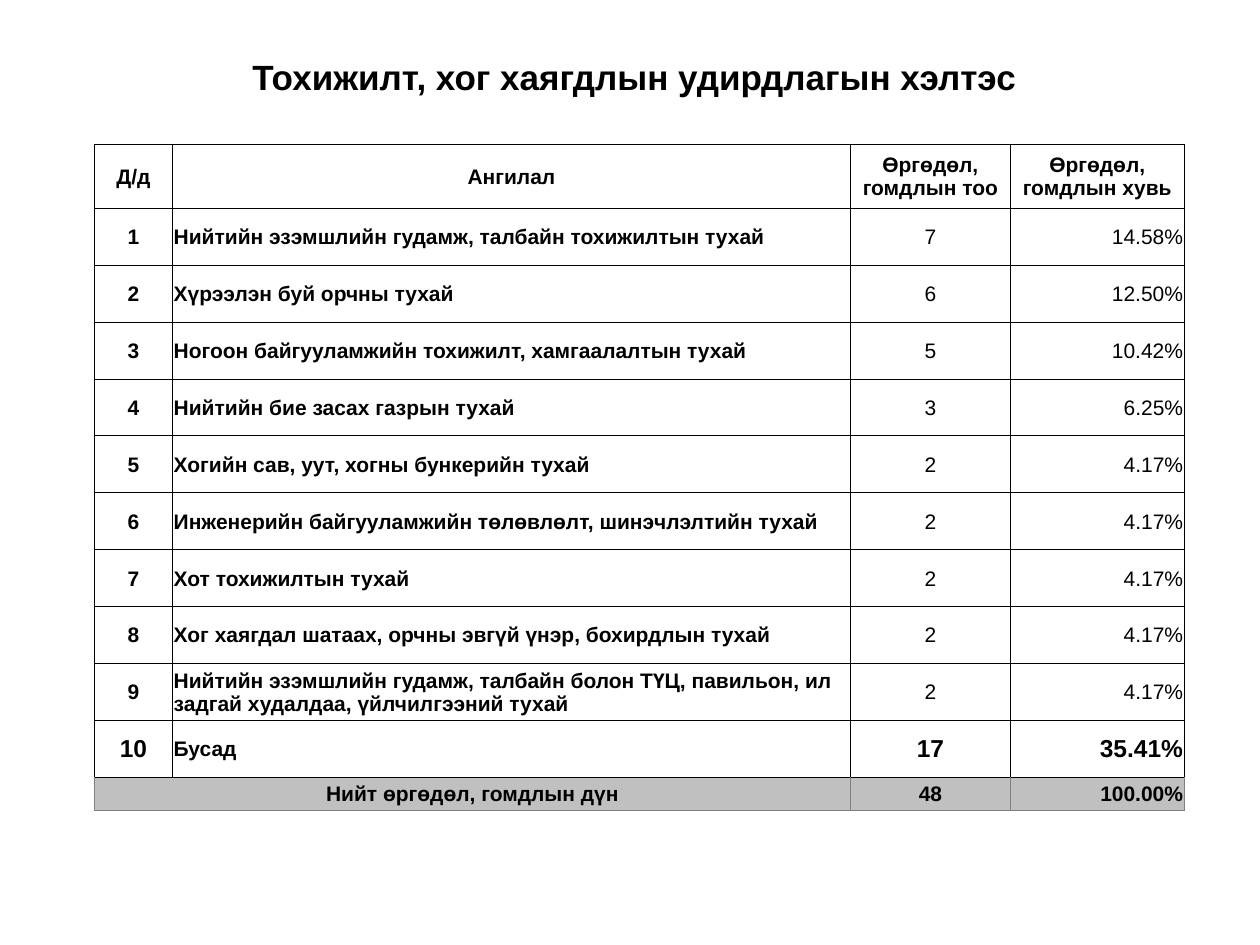
import pptx
import pptx.util
import pptx.dml.color
import pptx.enum.text
import pptx.oxml
import pptx.oxml.ns

Pt = pptx.util.Pt
RGB = pptx.dml.color.RGBColor
ALIGN = pptx.enum.text.PP_ALIGN
ANCHOR = pptx.enum.text.MSO_ANCHOR

BLACK = RGB(0x00, 0x00, 0x00)
WHITE = RGB(0xFF, 0xFF, 0xFF)
SILVER = RGB(0xC0, 0xC0, 0xC0)
GRAY = RGB(0x80, 0x80, 0x80)
FONT = "Arial"

TITLE = "Тохижилт, хог хаягдлын удирдлагын хэлтэс"
HEAD = ("Д/д", "Ангилал", "Өргөдөл, гомдлын тоо", "Өргөдөл, гомдлын хувь")
TOPICS = (
    ("Нийтийн эзэмшлийн гудамж, талбайн тохижилтын тухай", "7", "14.58%"),
    ("Хүрээлэн буй орчны тухай", "6", "12.50%"),
    ("Ногоон байгууламжийн тохижилт, хамгаалалтын тухай", "5", "10.42%"),
    ("Нийтийн бие засах газрын тухай", "3", "6.25%"),
    ("Хогийн сав, уут, хогны бункерийн тухай", "2", "4.17%"),
    ("Инженерийн байгууламжийн төлөвлөлт, шинэчлэлтийн тухай", "2", "4.17%"),
    ("Хот тохижилтын тухай", "2", "4.17%"),
    ("Хог хаягдал шатаах, орчны эвгүй үнэр, бохирдлын тухай", "2", "4.17%"),
    ("Нийтийн эзэмшлийн гудамж, талбайн болон ТҮЦ, павильон, ил задгай "
     "худалдаа, үйлчилгээний тухай", "2", "4.17%"),
    ("Бусад", "17", "35.41%"),
)
TOTAL = ("Нийт өргөдөл, гомдлын дүн", "", "48", "100.00%")
WIDTHS = (44.6, 387.4, 91.4, 99.4)
HEIGHTS = (36.6, *[32.53] * len(TOPICS), 18.7)


def style(para, size, bold, align):
    para.alignment = align
    para.font.name = FONT
    para.font.size = Pt(size)
    para.font.bold = bold
    para.font.color.rgb = BLACK


def edge(cell, side, color):
    props = cell._tc.get_or_add_tcPr()
    props.append(pptx.oxml.parse_xml(
        f'<a:ln{side} {pptx.oxml.ns.nsdecls("a")} w="{Pt(0.5)}"><a:solidFill>'
        f'<a:srgbClr val="{color}"/></a:solidFill></a:ln{side}>'))


def fill_cell(cell, text, size, bold, align, fill, line):
    for side in "LRTB":
        edge(cell, side, BLACK if side == "T" else line)
    cell.fill.solid()
    cell.fill.fore_color.rgb = fill
    cell.vertical_anchor = ANCHOR.MIDDLE
    cell.margin_left = cell.margin_right = cell.margin_top = Pt(0.7)
    cell.margin_bottom = 0
    cell.text = text
    style(cell.text_frame.paragraphs[0], size, bold, align)


def add_title(slide, left, top, width, height):
    title = slide.shapes.title
    title.left, title.top = Pt(left), Pt(top)
    title.width, title.height = Pt(width), Pt(height)
    frame = title.text_frame
    frame.text = TITLE
    frame.word_wrap = True
    frame.auto_size = pptx.enum.text.MSO_AUTO_SIZE.NONE
    frame.vertical_anchor = ANCHOR.TOP
    frame.margin_top = Pt(3)
    frame.margin_right = Pt(12.8)
    para = frame.paragraphs[0]
    para.line_spacing = 0.9
    style(para, 20, True, ALIGN.CENTER)


def add_grid(slide, left, top, width, height):
    last = len(TOPICS)
    rows = [HEAD, *[(str(n), *row) for n, row in enumerate(TOPICS, 1)], TOTAL]
    table = slide.shapes.add_table(
        len(rows), len(HEAD), Pt(left), Pt(top), Pt(width), Pt(height)).table
    table.first_row = table.horz_banding = False
    for col, size in zip(table.columns, WIDTHS):
        col.width = Pt(size * width / sum(WIDTHS))
    for row, size in zip(table.rows, HEIGHTS):
        row.height = Pt(size * height / sum(HEIGHTS))

    for r, row in enumerate(rows):
        total = r > last
        for c, text in enumerate(row):
            align = ALIGN.CENTER
            if c == 1 and 0 < r <= last:
                align = ALIGN.JUSTIFY if r == last else ALIGN.LEFT
            elif c == 3 and r > 0:
                align = ALIGN.RIGHT
            fill_cell(
                table.cell(r, c), text,
                size=14 if r == last and c != 1 else 12,
                bold=c < 2 or r == 0 or r >= last,
                align=align,
                fill=SILVER if total else WHITE,
                line=GRAY if total else BLACK)
    table.cell(last + 1, 0).merge(table.cell(last + 1, 1))


def main():
    deck = pptx.Presentation()
    deck.slide_width, deck.slide_height = Pt(720), Pt(540)
    slide = deck.slides.add_slide(deck.slide_layouts[5])
    add_title(slide, 54, 31.7, 622.8, 51)
    add_grid(slide, 54, 82.4, 622.8, 380.6)
    deck.save("out.pptx")


if __name__ == "__main__":
    main()
